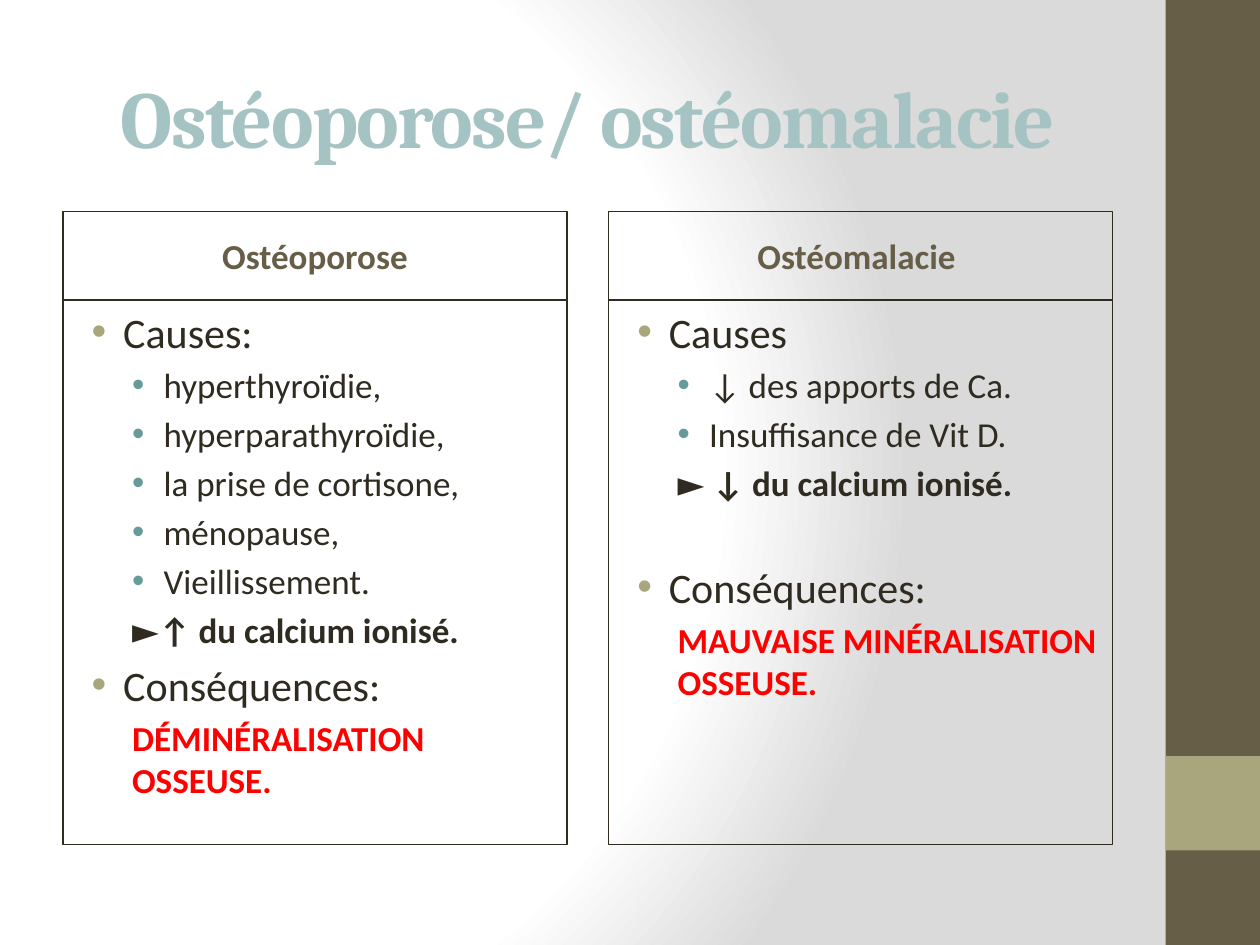
"""Build a slide that compares the causes and consequences of two bone diseases."""
from lxml import etree
from pptx import Presentation
from pptx import util as u
from pptx.dml.color import RGBColor
from pptx.enum import shapes, text
from pptx.oxml import ns, parse_xml

BROWN = RGBColor(0x67, 0x5E, 0x47)
KHAKI = RGBColor(0xA9, 0xA5, 0x7C)
TEAL = RGBColor(0x67, 0x9B, 0x9A)
PALE_TEAL = RGBColor(0xA4, 0xC3, 0xC2)
INK = RGBColor(0x2F, 0x2B, 0x20)
RED = RGBColor(0xFF, 0x00, 0x00)

FORMATS = {
    "title": dict(size=46, name="Cambria", color=PALE_TEAL, bold=True),
    "heading": dict(size=20, name="Calibri", color=BROWN, bold=True),
    "topic": dict(size=24, name="Calibri", color=INK, bold=False),
    "item": dict(size=20, name="Calibri", color=INK, bold=False),
    "result": dict(size=20, name="Calibri", color=INK, bold=True),
    "effect": dict(size=20, name="Calibri", color=RED, bold=True),
}
LAYOUT = {
    "topic": dict(left=0.38, indent=-0.25, bullet=KHAKI, level=0),
    "item": dict(left=0.7, indent=-0.25, bullet=TEAL, level=1),
    "result": dict(left=0.45, indent=0, bullet=None, level=1),
    "effect": dict(left=0.45, indent=0, bullet=None, level=1),
}
COLUMNS = [
    ("Ostéoporose", 5, [
        ("topic", ["Causes:"]),
        ("item", ["hyperthyroïdie,"]),
        ("item", ["hyperparathyroïdie,"]),
        ("item", ["la prise de cortisone,"]),
        ("item", ["ménopause,"]),
        ("item", ["Vieillissement."]),
        ("result", ["►", "↑ du calcium ionisé."]),
        ("topic", ["Conséquences:"]),
        ("effect", ["DÉMINÉRALISATION OSSEUSE."]),
    ]),
    ("Ostéomalacie ", 33, [
        ("topic", ["Causes"]),
        ("item", ["↓ des apports de Ca."]),
        ("item", ["Insuffisance de Vit D."]),
        ("result", ["►", " ↓ du calcium ionisé."]),
        ("topic", ["Conséquences:"]),
        ("effect", ["MAUVAISE MINÉRALISATION OSSEUSE."]),
    ]),
]
MARGIN, COLUMN_WIDTH, COLUMN_STEP = 0.5, 4, 4.33
HEADING_TOP, HEADING_HEIGHT, BODY_HEIGHT = 1.68, 0.7, 4.32


def add_run(paragraph, words, style):
    run = paragraph.add_run()
    run.text = words
    for key, value in FORMATS[style].items():
        if key == "color":
            run.font.color.rgb = value
        else:
            setattr(run.font, key, u.Pt(value) if key == "size" else value)
    return run


def add_box(left, top, width, height, fill=None, line=None):
    box = slide.shapes.add_shape(
        shapes.MSO_SHAPE.RECTANGLE, *map(u.Inches, (left, top, width, height)))
    box.shadow.inherit = False
    for part, color in ((box.fill, fill), (box.line.fill, line)):
        if color is None:
            part.background()
        else:
            part.solid()
            part.fore_color.rgb = color
    if line is not None:
        box.line.width = u.Pt(0.75)
    box.text_frame.word_wrap = True
    return box


prs = Presentation()
prs.slide_width, prs.slide_height = u.Inches(10), u.Inches(7.5)
slide = prs.slides.add_slide(prs.slide_layouts[6])

slide.background.fill.gradient()
gradient = slide.element.find(".//" + ns.qn("a:gradFill"))
stops = "".join(
    f'<a:gs pos="{share * 1000}"><a:srgbClr val="{color}"/></a:gs>'
    for share, color in ((0, "FFFFFF"), (75, "FFFFFF"), (100, "DADADA")))
gradient.getparent().replace(gradient, parse_xml(
    f'<a:gradFill {ns.nsdecls("a")} rotWithShape="1"><a:gsLst>{stops}</a:gsLst>'
    '<a:path path="circle"><a:fillToRect l="20000" t="50000" r="100000" b="50000"/>'
    '</a:path></a:gradFill>'))

add_box(9.25, 0, 0.75, 7.5, fill=BROWN)
add_box(9.25, 6, 0.75, 0.75, fill=KHAKI)

title = add_box(MARGIN, 0.3, COLUMN_STEP + COLUMN_WIDTH, 1.25)
title_line = title.text_frame.paragraphs[0]
title_line.alignment = text.PP_ALIGN.CENTER
title_run = add_run(title_line, "Ostéoporose/ ostéomalacie", "title")
title_run.font._element.set("spc", "-100")

for number, (disease, topic_gap, lines) in enumerate(COLUMNS):
    left = MARGIN + number * COLUMN_STEP
    heading = add_box(left, HEADING_TOP, COLUMN_WIDTH, HEADING_HEIGHT, line=INK)
    heading_line = heading.text_frame.paragraphs[0]
    heading_line.alignment = text.PP_ALIGN.CENTER
    add_run(heading_line, disease, "heading")

    body = add_box(left, HEADING_TOP + HEADING_HEIGHT, COLUMN_WIDTH, BODY_HEIGHT, line=INK)
    frame = body.text_frame
    frame.vertical_anchor = text.MSO_ANCHOR.TOP
    for row, (style, pieces) in enumerate(lines):
        paragraph = frame.add_paragraph() if row else frame.paragraphs[0]
        layout = LAYOUT[style]
        paragraph.alignment = text.PP_ALIGN.LEFT
        paragraph.level = layout["level"]
        if row:
            paragraph.space_before = u.Pt(topic_gap if style == "topic" else 4)
        properties = paragraph._p.get_or_add_pPr()
        properties.set("marL", str(u.Inches(layout["left"])))
        properties.set("indent", str(u.Inches(layout["indent"])))
        if layout["bullet"] is not None:
            bullet_color = etree.SubElement(properties, ns.qn("a:buClr"))
            etree.SubElement(bullet_color, ns.qn("a:srgbClr"), val=str(layout["bullet"]))
            etree.SubElement(properties, ns.qn("a:buFont"), typeface="Arial")
            etree.SubElement(properties, ns.qn("a:buChar"), char="•")
        for piece in pieces:
            run = add_run(paragraph, piece, style)
            if piece == "►":
                run.font.name = "Quicksand"

prs.save("out.pptx")
